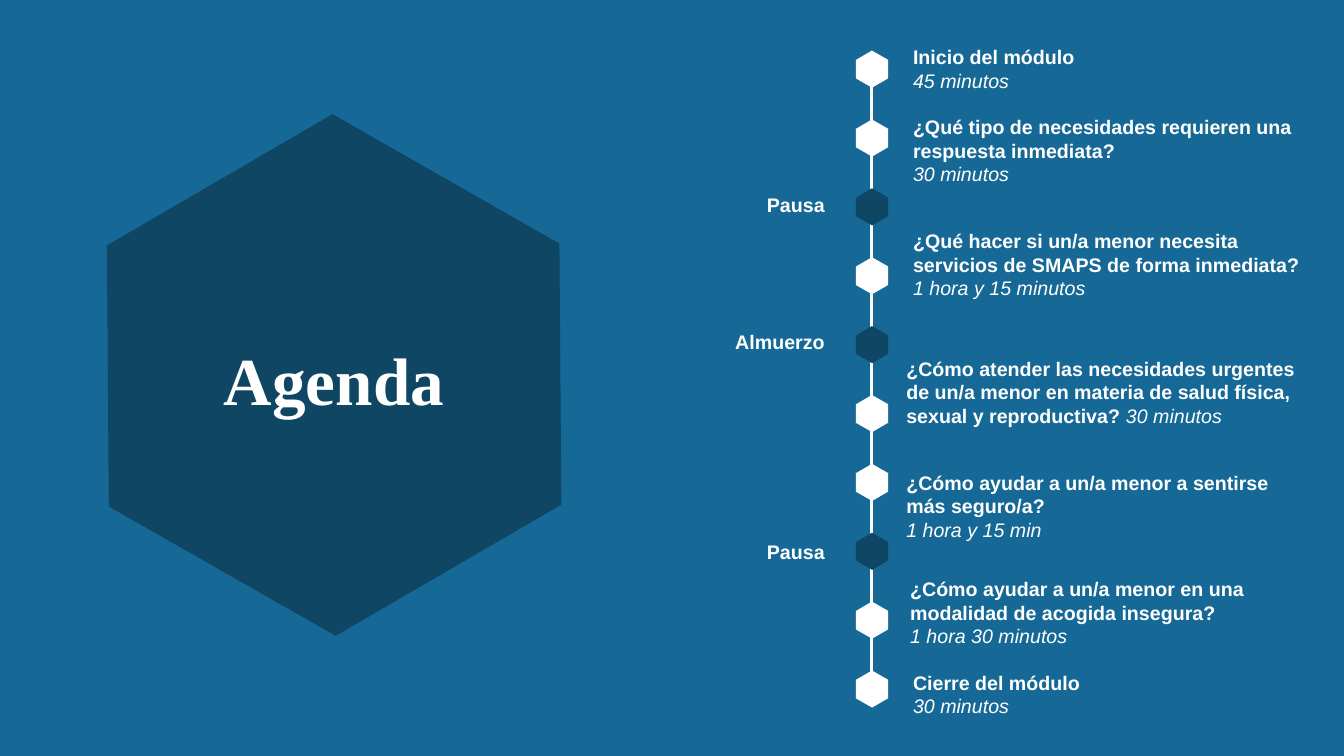
from lxml import etree
from pptx import Presentation
from pptx.dml.color import RGBColor
from pptx.enum import shapes, text
from pptx.oxml import ns
from pptx.util import Pt

BLUE = RGBColor(0x16, 0x69, 0x96)
NAVY = RGBColor(0x0E, 0x46, 0x64)
WHITE = RGBColor(0xFF, 0xFF, 0xFF)

deck = Presentation()
deck.slide_width, deck.slide_height = Pt(960), Pt(540)
slide = deck.slides.add_slide(deck.slide_layouts[6])
slide.background.fill.solid()
slide.background.fill.fore_color.rgb = BLUE


def add_hexagon(left, top, width, height, color):
    hexagon = slide.shapes.add_shape(
        shapes.MSO_SHAPE.HEXAGON, Pt(left), Pt(top), Pt(width), Pt(height))
    hexagon.rotation = 29.7
    hexagon.adjustments[0] = 0.29
    hexagon.shadow.inherit = False
    hexagon.fill.solid()
    hexagon.fill.fore_color.rgb = color
    hexagon.line.fill.background()


def add_label(left, top, width, height, paragraphs, align, size=14, font="Arial"):
    """Each paragraph is a list of (words, is_duration) runs."""
    frame = slide.shapes.add_textbox(Pt(left), Pt(top), Pt(width), Pt(height)).text_frame
    frame.word_wrap = True
    for index, runs in enumerate(paragraphs):
        paragraph = frame.add_paragraph() if index else frame.paragraphs[0]
        paragraph.alignment = align
        for words, is_duration in runs:
            run = paragraph.add_run()
            run.text = words
            run.font.name, run.font.size = font, Pt(size)
            run.font.bold, run.font.italic = not is_duration, is_duration
            run.font.color.rgb = WHITE
    return frame


# Title on its large hexagon
add_hexagon(51.8, 106.6, 373.7, 322.6, NAVY)
title = add_label(80.6, 252, 316, 43.9, [[("Agenda", False)]],
                  text.PP_ALIGN.CENTER, 48, "Times New Roman")
title.vertical_anchor = text.MSO_ANCHOR.MIDDLE
title.paragraphs[0].line_spacing = 0.9

# Timeline
timeline = slide.shapes.add_connector(
    shapes.MSO_CONNECTOR.STRAIGHT, Pt(622.8), Pt(44.6), Pt(622.8), Pt(492.5))
timeline.line.color.rgb = WHITE
timeline.line.width = Pt(2.25)
etree.SubElement(timeline._element.spPr, ns.qn("a:effectLst"))

# Ten evenly spaced markers, dark for the breaks
BREAK_STEPS = (2, 4, 7)
for step in range(10):
    add_hexagon(609.6, 37.9 + 49.2 * step, 26.6, 23,
                NAVY if step in BREAK_STEPS else WHITE)

# Breaks, left of the timeline
for top, name in [(134.6, "Pausa"), (231.8, "Almuerzo"), (382.3, "Pausa")]:
    add_label(489.6, top, 106.6, 24.2, [[(name, False)]], text.PP_ALIGN.RIGHT)

# Sessions, right of the timeline: left, top, width, height, topic, duration
sessions = [
    (645.1, 28.8, 258.5, 41, "Inicio del módulo", "45 minutos"),
    (645.1, 78.7, 285.1, 58.2,
     "¿Qué tipo de necesidades requieren una respuesta inmediata?", "30 minutos"),
    (645.1, 160, 303.8, 58.2,
     "¿Qué hacer si un/a menor necesita servicios de SMAPS de forma inmediata?",
     "1 hora y 15 minutos"),
    (640.3, 251.3, 303.8, 58.2,
     "¿Cómo atender las necesidades urgentes de un/a menor en materia de salud física, "
     "sexual y reproductiva? ", "30 minutos"),
    (640.3, 332.6, 289.4, 58.2,
     "¿Cómo ayudar a un/a menor a sentirse más seguro/a?", "1 hora y 15 min"),
    (643, 408.8, 258.5, 58.2,
     "¿Cómo ayudar a un/a menor en una modalidad de acogida insegura?",
     "1 hora 30 minutos"),
    (645.1, 475.5, 254.2, 41, "Cierre del módulo", "30 minutos"),
]
for left, top, width, height, topic, duration in sessions:
    runs = [(topic, False), (duration, True)]
    # A topic ending in a space keeps its duration on the same line
    paragraphs = [runs] if topic.endswith(" ") else [[run] for run in runs]
    add_label(left, top, width, height, paragraphs, text.PP_ALIGN.LEFT)

deck.save("out.pptx")
